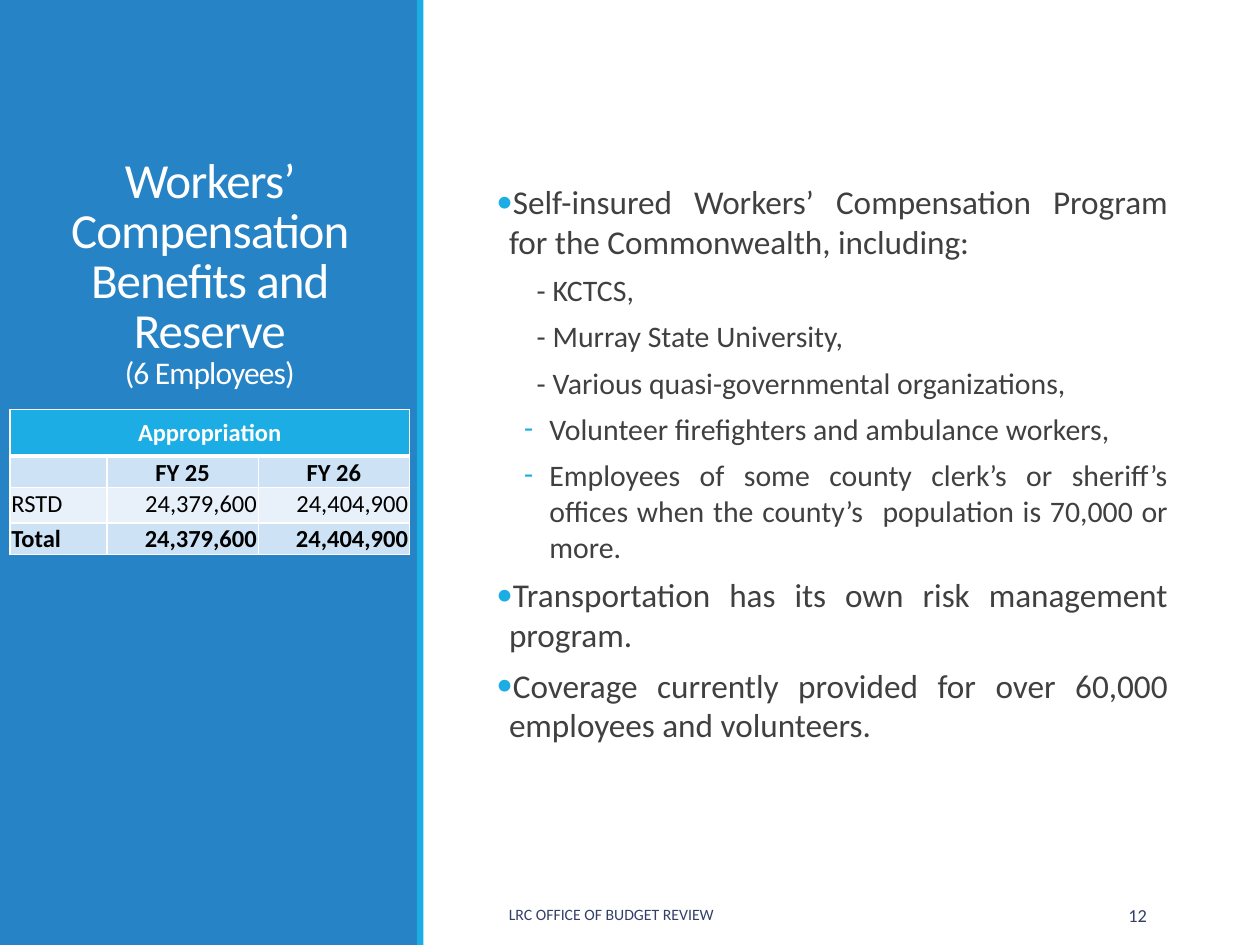
import pptx
import pptx.dml.color
import pptx.enum.shapes
import pptx.enum.text
import pptx.oxml.ns
import pptx.util
from lxml import etree
from pptx.util import Inches, Pt

RGBColor = pptx.dml.color.RGBColor
ALIGN = pptx.enum.text.PP_ALIGN
ANCHOR = pptx.enum.text.MSO_ANCHOR
qn = pptx.oxml.ns.qn

WHITE = RGBColor(0xFF, 0xFF, 0xFF)
BLACK = RGBColor(0x00, 0x00, 0x00)
PANEL_BLUE = RGBColor(0x26, 0x83, 0xC6)
ACCENT = RGBColor(0x1C, 0xAD, 0xE4)
BODY_GREY = RGBColor(0x40, 0x40, 0x40)
FOOTER_NAVY = RGBColor(0x34, 0x40, 0x68)
BAND_DARK = RGBColor(0xCD, 0xE3, 0xF5)
BAND_LIGHT = RGBColor(0xE8, 0xF1, 0xFA)
FONT = "Calibri"

# Each level: size, left margin, first-line indent, bullet
TOPIC = (19, 0.1, -0.1, "•")
TYPED_DASH = (17, 0.32, 0, None)
DASH = (17, 0.42, -0.2, "-")
POINTS = [
    (TOPIC, "Self-insured Workers’ Compensation Program for the Commonwealth, including: "),
    (TYPED_DASH, "- KCTCS,"),
    (TYPED_DASH, "- Murray State University, "),
    (TYPED_DASH, "- Various quasi-governmental organizations, "),
    (DASH, "Volunteer firefighters and ambulance workers, "),
    (DASH, "Employees of some county clerk’s or sheriff’s offices when the county’s "
           "\tpopulation is 70,000 or more."),
    (TOPIC, "Transportation has its own risk management program."),
    (TOPIC, "Coverage currently provided for over 60,000 employees and volunteers."),
]
APPROPRIATION = [
    ["Appropriation", "", ""],
    ["", "FY 25", "FY 26"],
    ["RSTD", "24,379,600", "24,404,900"],
    ["Total", "24,379,600", "24,404,900"],
]


def style_run(run, size, color, bold=False):
    run.font.name = FONT
    run.font.size = Pt(size)
    run.font.bold = bold
    run.font.color.rgb = color


def add_text_frame(slide, box, anchor):
    frame = slide.shapes.add_textbox(*map(Inches, box)).text_frame
    frame.word_wrap = True
    frame.vertical_anchor = anchor
    return frame


def add_band(slide, box, color):
    band = slide.shapes.add_shape(
        pptx.enum.shapes.MSO_SHAPE.RECTANGLE, *map(Inches, box))
    band.shadow.inherit = False
    band.fill.solid()
    band.fill.fore_color.rgb = color
    band.line.fill.background()


def add_title(slide, box):
    title = add_text_frame(slide, box, ANCHOR.BOTTOM).paragraphs[0]
    title.text = "Workers’ Compensation Benefits and Reserve\v(6 Employees)"
    title.alignment = ALIGN.CENTER
    title.line_spacing = 0.85
    for run, size in zip(title.runs, (28, 18)):
        style_run(run, size, WHITE)
        run.font._element.set("spc", "-50")


def set_bullet(paragraph, left, indent, bullet):
    properties = paragraph._p.get_or_add_pPr()
    properties.set("marL", str(Inches(left)))
    properties.set("indent", str(Inches(indent)))
    if bullet:
        color = etree.SubElement(properties, qn("a:buClr"))
        etree.SubElement(color, qn("a:srgbClr"), val=str(ACCENT))
        etree.SubElement(properties, qn("a:buFont"), typeface=FONT)
        etree.SubElement(properties, qn("a:buChar"), char=bullet)


def add_points(slide, box):
    frame = add_text_frame(slide, box, ANCHOR.MIDDLE)
    frame.margin_left = frame.margin_right = 0
    frame.text = "\n".join(text for _, text in POINTS)
    for point, (level, _) in zip(frame.paragraphs, POINTS):
        size, left, indent, bullet = level
        point.alignment = ALIGN.JUSTIFY
        point.space_after = Pt(6)
        set_bullet(point, left, indent, bullet)
        style_run(point.runs[0], size, BODY_GREY)


def add_footer(slide, box, text, size, alignment):
    footer = add_text_frame(slide, box, ANCHOR.MIDDLE).paragraphs[0]
    footer.text = text
    footer.alignment = alignment
    style_run(footer.runs[0], size, FOOTER_NAVY)


def set_borders(cell, bottom_width):
    properties = cell._tc.get_or_add_tcPr()
    widths = {"a:lnL": 1, "a:lnR": 1, "a:lnT": 1, "a:lnB": bottom_width}
    for position, (side, width) in enumerate(widths.items()):
        line = etree.Element(qn(side), w=str(Pt(width)))
        fill = etree.SubElement(line, qn("a:solidFill"))
        etree.SubElement(fill, qn("a:srgbClr"), val=str(WHITE))
        properties.insert(position, line)


def fill_cell(cell, row, column, text):
    header = row == 0
    cell.fill.solid()
    cell.fill.fore_color.rgb = ACCENT if header else (BAND_LIGHT if row == 2 else BAND_DARK)
    set_borders(cell, 3 if header else 1)
    cell.margin_left = cell.margin_right = cell.margin_top = Inches(0.01)
    cell.margin_bottom = 0
    if header:
        cell.vertical_anchor = ANCHOR.MIDDLE
    elif row == 1 or (row == 3 and column == 0):
        cell.vertical_anchor = ANCHOR.BOTTOM
    else:
        cell.vertical_anchor = ANCHOR.TOP
    entry = cell.text_frame.paragraphs[0]
    if not text:
        # Keeps an empty cell from growing its row
        etree.SubElement(entry._p, qn("a:endParaRPr"), sz="1400")
        return
    entry.text = text
    if row < 2:
        entry.alignment = ALIGN.CENTER
    else:
        entry.alignment = ALIGN.RIGHT if column else ALIGN.LEFT
    style_run(entry.runs[0], 14, WHITE if header else BLACK, bold=row != 2)


def add_appropriation(slide, box):
    table = slide.shapes.add_table(4, 3, *map(Inches, box)).table
    for column, width in zip(table.columns, (0.77, 1.2, 1.2)):
        column.width = Inches(width)
    for row, height in zip(table.rows, (0.37, 0.25, 0.28, 0.25)):
        row.height = Inches(height)
    table.cell(0, 0).merge(table.cell(0, 2))
    for row, entries in enumerate(APPROPRIATION):
        for column, text in enumerate(entries):
            fill_cell(table.cell(row, column), row, column, text)


def main():
    deck = pptx.Presentation()
    deck.slide_width, deck.slide_height = Inches(10), Inches(7.5)
    slide = deck.slides.add_slide(deck.slide_layouts[6])
    add_band(slide, (0, 0, 3.32, 7.5), PANEL_BLUE)
    add_band(slide, (3.31, 0, 0.05, 7.5), ACCENT)
    add_title(slide, (0, 0.65, 3.33, 2.5))
    add_points(slide, (3.94, 0.8, 5.33, 5.75))
    add_footer(slide, (3.94, 7.06, 3.81, 0.4), "LRC OFFICE OF BUDGET REVIEW", 9, ALIGN.LEFT)
    add_footer(slide, (8.12, 7.06, 1.08, 0.4), "12", 10.5, ALIGN.RIGHT)
    add_appropriation(slide, (0.08, 3.25, 3.17, 1.15))
    deck.save("out.pptx")


if __name__ == "__main__":
    main()
